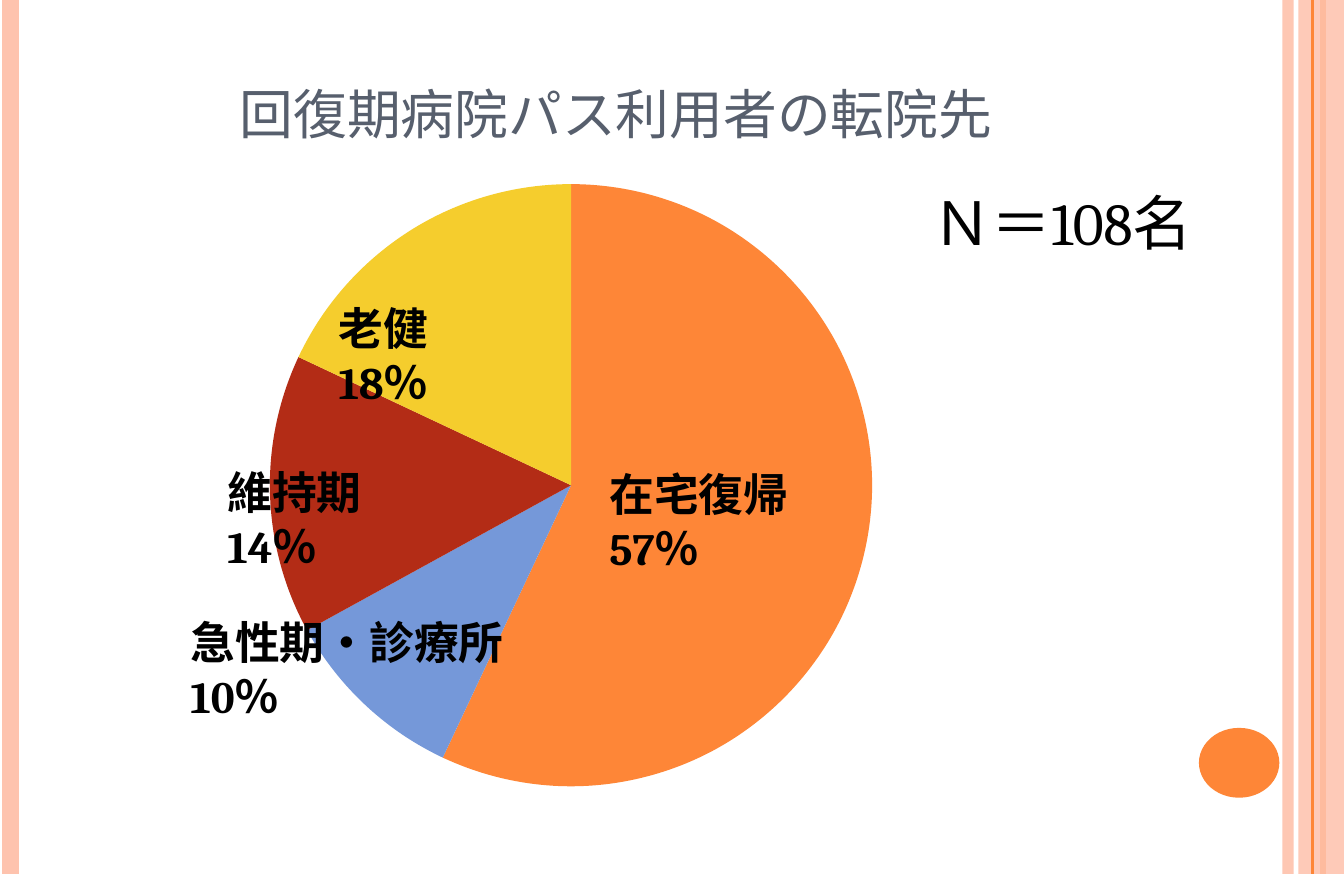
from dataclasses import dataclass

from lxml import etree
from pptx import Presentation
from pptx import util as u
from pptx.chart import data as chart_data
from pptx.dml import color
from pptx.enum import chart as charts, shapes, text
from pptx.oxml import ns

FONT = "Cambria"
ORANGE, SALMON, BLACK, SLATE = "FE8637", "FEC3AE", "000000", "575F6D"
WIDTH, HEIGHT = 12.7, 8.26


@dataclass
class Stripe:
    x: float
    hue: str
    points: float
    opacity: int = 100


@dataclass
class Caption:
    wording: str
    x: float
    y: float
    width: float
    height: float = 0.76
    size: int = 12
    bold: bool = True


@dataclass
class Slice:
    category: str
    share: int
    hue: str


def paint(colour_format, hue: str, opacity: int = 100) -> None:
    """Set a solid colour on a fill or a line's fill."""
    colour_format.solid()
    colour_format.fore_color.rgb = color.RGBColor.from_string(hue)
    if opacity < 100:
        srgb = colour_format._xPr.find(".//" + ns.qn("a:srgbClr"))
        etree.SubElement(srgb, ns.qn("a:alpha"), val=str(opacity * 1000))


def write(paragraph, wording: str, size: int, hue: str, bold: bool = False):
    run = paragraph.add_run()
    run.text = wording
    run.font.name, run.font.size, run.font.bold = FONT, u.Pt(size), bold
    paint(run.font.fill, hue)
    return run


def draw_stripe(slide, stripe: Stripe) -> None:
    line = slide.shapes.add_connector(
        shapes.MSO_CONNECTOR.STRAIGHT,
        u.Cm(stripe.x), u.Cm(0), u.Cm(stripe.x), u.Cm(HEIGHT))
    line.line.width = u.Pt(stripe.points)
    paint(line.line.fill, stripe.hue, stripe.opacity)
    etree.SubElement(line._element.spPr, ns.qn("a:effectLst"))


def draw_block(slide, kind, x: float, y: float, width: float, height: float,
               hue: str, opacity: int = 100) -> None:
    block = slide.shapes.add_shape(kind, u.Cm(x), u.Cm(y), u.Cm(width), u.Cm(height))
    block.shadow.inherit = False
    block.line.fill.background()
    paint(block.fill, hue, opacity)


def draw_caption(slide, caption: Caption) -> None:
    box = slide.shapes.add_textbox(u.Cm(caption.x), u.Cm(caption.y),
                                   u.Cm(caption.width), u.Cm(caption.height))
    frame = box.text_frame
    frame.word_wrap = True
    frame.auto_size = text.MSO_AUTO_SIZE.SHAPE_TO_FIT_TEXT
    write(frame.paragraphs[0], caption.wording, caption.size, BLACK, caption.bold)


def set_title(slide, wording: str) -> None:
    title = slide.shapes.title
    title.left, title.top = u.Cm(0.64), u.Cm(0.33)
    title.width, title.height = u.Cm(10.36), u.Cm(1.37)
    frame = title.text_frame
    frame.margin_left = frame.margin_right = u.Cm(0.13)
    frame.margin_top = frame.margin_bottom = u.Cm(0.05)
    frame.vertical_anchor = text.MSO_ANCHOR.MIDDLE
    heading = frame.paragraphs[0]
    heading.alignment = text.PP_ALIGN.CENTER
    run = write(heading, wording, 18, SLATE)
    run.font._element.set("cap", "small")


def draw_pie(slide, slices: list[Slice]) -> None:
    shares = chart_data.CategoryChartData()
    shares.categories = [part.category for part in slices]
    shares.add_series("Series 1", [part.share for part in slices])
    pie = slide.shapes.add_chart(charts.XL_CHART_TYPE.PIE, u.Cm(0.08), u.Cm(1.42),
                                 u.Cm(10.74), u.Cm(6.4), shares).chart
    pie.has_legend = pie.has_title = False
    pie.font.name, pie.font.size = FONT, u.Pt(10)
    paint(pie.font.fill, BLACK)
    plot = pie.plots[0]
    plot.vary_by_categories = True
    for index, part in enumerate(slices):
        point = plot.series[0].points[index].format
        paint(point.fill, part.hue)
        point.line.fill.background()

    # Fixed plot area, as fractions of the chart
    area = pie._chartSpace.chart.plotArea
    for old in area.findall(ns.qn("c:layout")):
        area.remove(old)
    layout = etree.Element(ns.qn("c:layout"))
    manual = etree.SubElement(layout, ns.qn("c:manualLayout"))
    settings = {"layoutTarget": "inner", "xMode": "edge", "yMode": "edge",
                "x": 0.23, "y": 0.05, "w": 0.53, "h": 0.89}
    for tag, setting in settings.items():
        etree.SubElement(manual, ns.qn("c:" + tag), val=str(setting))
    area.insert(0, layout)


STRIPES = [Stripe(12.17, SALMON, 3, 93), Stripe(0.1, SALMON, 4.5),
           Stripe(12.5, ORANGE, 1.5)]
INNER_STRIPE = Stripe(12.4, ORANGE, 0.75)
SLICES = [Slice("1", 57, ORANGE), Slice("2", 10, "7598D9"),
          Slice("3", 15, "B32C16"), Slice("4", 18, "F5CD2D")]
CAPTIONS = [
    Caption("Ｎ＝108名", 8.56, 1.63, 3.07, 0.94, 16, False),
    Caption("在宅復帰　57％", 5.51, 4.29, 3.43),
    Caption("老健　18％", 2.95, 2.72, 2.57),
    Caption("維持期　14％", 1.9, 4.27, 3.0),
    Caption("急性期・診療所　10％", 1.55, 5.69, 4.5),
]


def main() -> None:
    deck = Presentation()
    deck.slide_width, deck.slide_height = u.Cm(WIDTH), u.Cm(HEIGHT)
    slide = deck.slides.add_slide(deck.slide_layouts[5])

    # Side stripes and page dot
    for stripe in STRIPES:
        draw_stripe(slide, stripe)
    draw_block(slide, shapes.MSO_SHAPE.RECTANGLE, 12.27, 0, 0.43, HEIGHT, SALMON, 87)
    draw_stripe(slide, INNER_STRIPE)
    draw_block(slide, shapes.MSO_SHAPE.OVAL, 11.33, 6.88, 0.76, 0.66, ORANGE)

    # Title, pie and captions
    set_title(slide, "回復期病院パス利用者の転院先")
    draw_pie(slide, SLICES)
    for caption in CAPTIONS:
        draw_caption(slide, caption)

    deck.save("out.pptx")


if __name__ == "__main__":
    main()
